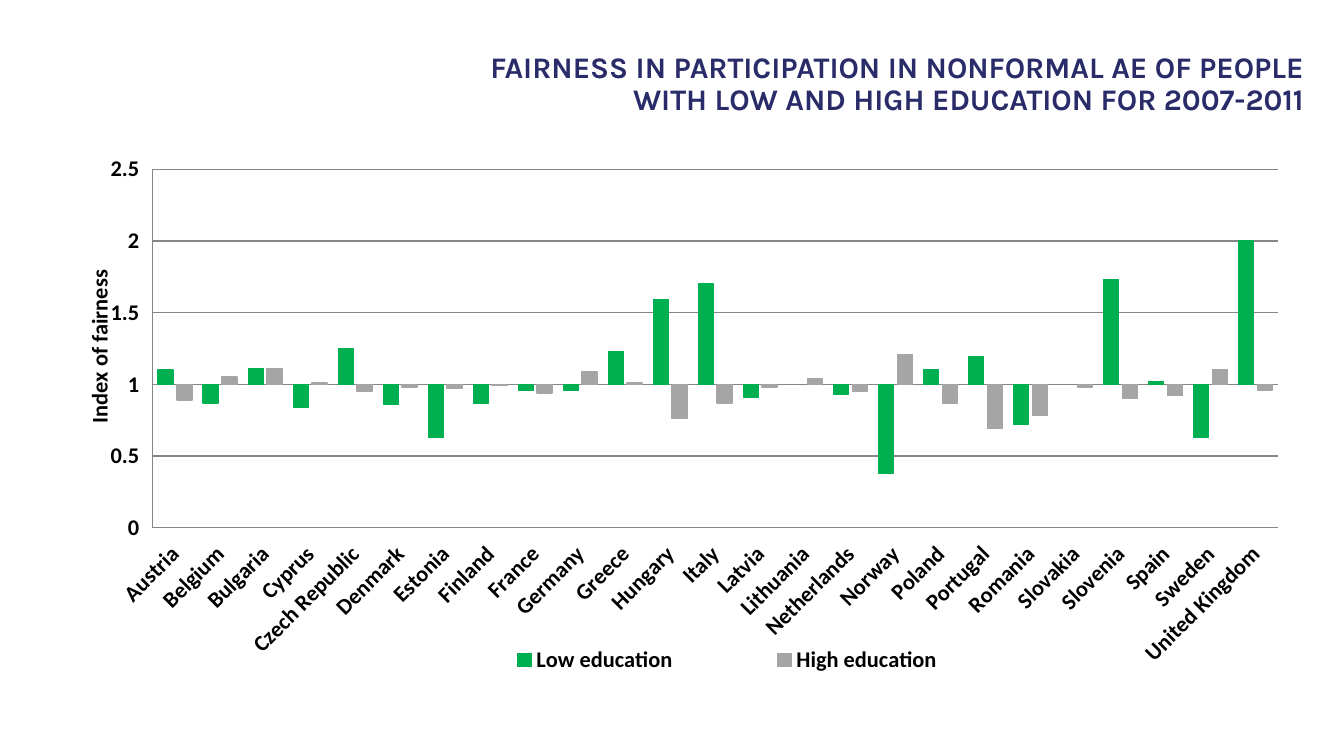
from dataclasses import dataclass

from lxml.etree import SubElement
from pptx import Presentation
from pptx.chart.data import CategoryChartData as ChartData
from pptx.dml.color import RGBColor as Color
from pptx.enum.chart import XL_CHART_TYPE as ChartType
from pptx.enum.chart import XL_LEGEND_POSITION as LegendPosition
from pptx.enum.chart import XL_TICK_LABEL_POSITION as LabelPosition
from pptx.enum.chart import XL_TICK_MARK as TickMark
from pptx.enum.text import MSO_ANCHOR as Anchor
from pptx.enum.text import PP_ALIGN as Align
from pptx.oxml.ns import qn
from pptx.util import Pt

PX = 9525


@dataclass(frozen=True)
class Theme:
    """Colours, fonts and sizes of the slide."""
    title: Color = Color.from_string("292C69")
    text: Color = Color.from_string("000000")
    grid: Color = Color.from_string("868686")
    low: Color = Color.from_string("00B050")
    high: Color = Color.from_string("A5A5A5")
    title_font: str = "Karla"
    chart_font: str = "Calibri"
    title_size: int = 16
    chart_size: int = 12
    line_width: float = 0.75


THEME = Theme()
FAIRNESS = {
    "Austria": (1.1, 0.89), "Belgium": (0.87, 1.05), "Bulgaria": (1.11, 1.11),
    "Cyprus": (0.84, 1.01), "Czech Republic": (1.25, 0.95), "Denmark": (0.86, 0.98),
    "Estonia": (0.63, 0.97), "Finland": (0.87, 0.99), "France": (0.96, 0.94),
    "Germany": (0.96, 1.09), "Greece": (1.23, 1.01), "Hungary": (1.59, 0.76),
    "Italy": (1.7, 0.87), "Latvia": (0.91, 0.98), "Lithuania": (None, 1.04),
    "Netherlands": (0.93, 0.95), "Norway": (0.38, 1.21), "Poland": (1.1, 0.87),
    "Portugal": (1.19, 0.69), "Romania": (0.72, 0.78), "Slovakia": (None, 0.98),
    "Slovenia": (1.73, 0.9), "Spain": (1.02, 0.92), "Sweden": (0.63, 1.1),
    "United Kingdom": (2, 0.96),
}


def set_values(target, values):
    """Set each attribute named in a dict."""
    for name, value in values.items():
        setattr(target, name, value)


def set_font(font, name, size, color):
    """Apply a bold typeface, size and colour."""
    set_values(font, {"name": name, "size": Pt(size), "bold": True})
    font.color.rgb = color


def set_layout(parent, index, chart_box, part_box, inner=False):
    """Place a chart part by px relative to the chart's box."""
    for old in parent.findall(qn("c:layout")):
        parent.remove(old)
    layout = SubElement(parent, qn("c:layout"))
    parent.insert(index, layout)
    manual = SubElement(layout, qn("c:manualLayout"))
    values = {"layoutTarget": "inner"} if inner else {}
    values |= {"xMode": "edge", "yMode": "edge"}
    sizes = chart_box[2:] * 2
    values |= {name: part / size for name, part, size in zip("xywh", part_box, sizes)}
    for name, value in values.items():
        SubElement(manual, qn(f"c:{name}")).set("val", str(value))


def add_title(slide, box, text):
    """Add the right-aligned slide title."""
    shape = slide.shapes.add_textbox(*(length * PX for length in box))
    frame = shape.text_frame
    set_values(frame, {"word_wrap": True, "vertical_anchor": Anchor.MIDDLE})
    paragraph = frame.paragraphs[0]
    set_values(paragraph, {"text": text, "alignment": Align.RIGHT, "line_spacing": 0.9})
    set_font(paragraph.runs[0].font, THEME.title_font, THEME.title_size, THEME.title)


def style_axes(chart, box):
    """Format both axes, with columns growing from the value 1."""
    chart_font = (THEME.chart_font, THEME.chart_size, THEME.text)
    for axis in (chart.category_axis, chart.value_axis):
        set_values(axis, {
            "major_tick_mark": TickMark.NONE, "minor_tick_mark": TickMark.NONE,
            "tick_label_position": LabelPosition.LOW,
        })
        set_font(axis.tick_labels.font, *chart_font)
        axis.format.line.color.rgb = THEME.grid
    chart.category_axis.has_major_gridlines = False
    labels = chart.category_axis._element.find(qn("c:txPr"))
    labels.find(qn("a:bodyPr")).set("rot", "-2700000")
    value_axis = chart.value_axis
    set_values(value_axis, {
        "minimum_scale": 0, "maximum_scale": 2.5, "major_unit": 0.5,
        "crosses_at": 1, "has_major_gridlines": True, "has_title": True,
    })
    value_axis.major_gridlines.format.line.color.rgb = THEME.grid
    title = value_axis.axis_title
    paragraph = title.text_frame.paragraphs[0]
    paragraph.text = "Index of fairness"
    set_font(paragraph.runs[0].font, *chart_font)
    set_layout(title._element, 1, box, (8, 102))


def add_fairness_chart(slide, box):
    """Add the column chart of fairness by country and education."""
    data = ChartData()
    data.categories = list(FAIRNESS)
    for name, values in zip(("Low education", "High education"), zip(*FAIRNESS.values())):
        data.add_series(name, values)
    frame = slide.shapes.add_chart(
        ChartType.COLUMN_CLUSTERED, *(length * PX for length in box), data)
    chart = frame.chart
    set_values(chart, {"has_title": False, "has_legend": True})
    set_font(chart.font, THEME.chart_font, THEME.chart_size, THEME.text)
    plot = chart.plots[0]
    set_values(plot, {"gap_width": 75, "overlap": -25, "vary_by_categories": False})
    for series, color in zip(plot.series, (THEME.low, THEME.high)):
        series.invert_if_negative = False
        series.format.fill.solid()
        series.format.fill.fore_color.rgb = color
        series.format.line.color.rgb = color
        series.format.line.width = Pt(THEME.line_width)
    style_axes(chart, box)
    legend = chart.legend
    set_values(legend, {"position": LegendPosition.BOTTOM, "include_in_layout": False})
    set_font(legend.font, THEME.chart_font, THEME.chart_size, THEME.text)
    set_layout(legend._element, 1, box, (251, 369, 439, 29))
    plot_area = chart._chartSpace.chart.plotArea
    set_layout(plot_area, 0, box, (60, 33, 804, 256), inner=True)


def main():
    """Build and save the presentation."""
    presentation = Presentation()
    set_values(presentation, {"slide_width": 960 * PX, "slide_height": 540 * PX})
    slide = presentation.slides.add_slide(presentation.slide_layouts[6])
    add_title(slide, (306, 32, 635, 57),
              "FAIRNESS IN PARTICIPATION IN NONFORMAL AE OF PEOPLE "
              "WITH LOW AND HIGH EDUCATION FOR 2007-2011")
    add_fairness_chart(slide, (49, 88, 870, 416))
    presentation.save("out.pptx")


if __name__ == "__main__":
    main()
